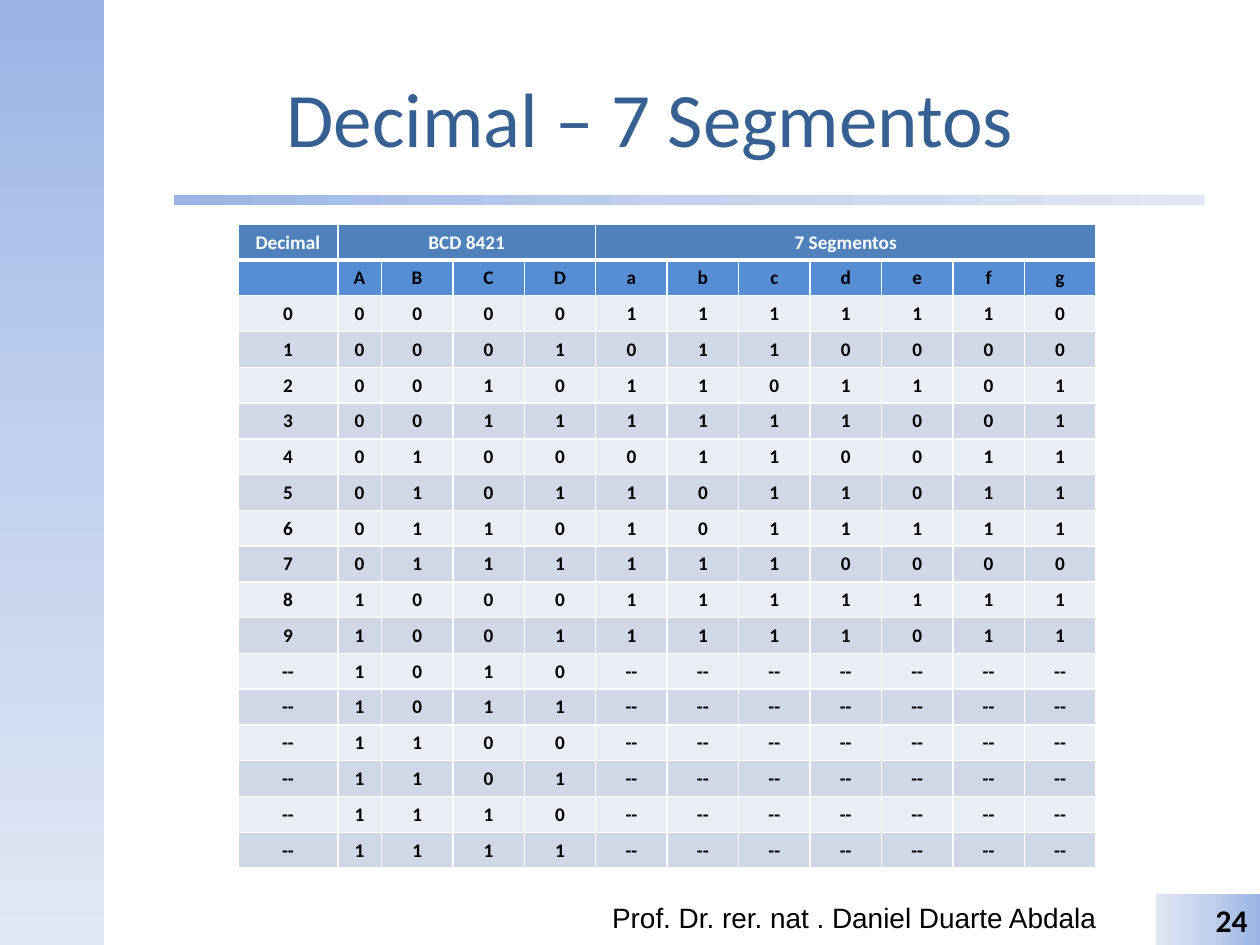
from lxml.etree import SubElement
from pptx import Presentation
from pptx.dml.color import RGBColor
from pptx.enum.shapes import MSO_SHAPE
from pptx.enum.text import MSO_ANCHOR, PP_ALIGN
from pptx.oxml import parse_xml
from pptx.oxml.ns import nsdecls, qn
from pptx.util import Cm, Pt

BLACK = RGBColor(0x00, 0x00, 0x00)
WHITE = RGBColor(0xFF, 0xFF, 0xFF)
TITLE_BLUE = RGBColor(0x37, 0x60, 0x92)
HEADER_BLUE = RGBColor(0x4F, 0x81, 0xBD)
LETTER_BLUE = RGBColor(0x55, 0x8E, 0xD5)
BAND_LIGHT = RGBColor(0xE9, 0xED, 0xF4)
BAND_DARK = RGBColor(0xD0, 0xD8, 0xE8)
GRADIENT = {
    0: RGBColor(0x9A, 0xB5, 0xE4),
    50: RGBColor(0xC2, 0xD1, 0xED),
    100: RGBColor(0xE1, 0xE8, 0xF5),
}

CELL_FONT = {"name": "Calibri", "size": Pt(11), "bold": True}
COLUMN_WIDTHS = [2.01, 0.88] + [1.44] * 10
ROW_HEIGHT = 0.72
ROW_COUNT = 18
HEADERS = [("Decimal", 0, 0), ("BCD 8421", 1, 4), ("7 Segmentos", 5, 11)]
SEGMENTS = [
    "1111110", "0110000", "1101101", "1111001", "0110011",
    "1011011", "1011111", "1110000", "1111111", "1111011",
]


def write_text(text_frame, text, font_values, color, alignment):
    paragraph = text_frame.paragraphs[0]
    paragraph.alignment = alignment
    run = paragraph.add_run()
    run.text = text
    for name, value in font_values.items():
        setattr(run.font, name, value)
    run.font.color.rgb = color


def add_gradient_bar(slide, box, angle, kind=MSO_SHAPE.RECTANGLE):
    shape = slide.shapes.add_shape(kind, *map(Cm, box))
    shape.shadow.inherit = False
    shape.line.fill.background()
    stops = "".join(
        f'<a:gs pos="{position * 1000}"><a:srgbClr val="{color}"/></a:gs>'
        for position, color in GRADIENT.items()
    )
    gradient = parse_xml(
        f'<a:gradFill {nsdecls("a")} rotWithShape="1"><a:gsLst>{stops}</a:gsLst>'
        f'<a:lin ang="{angle * 60000}" scaled="0"/></a:gradFill>'
    )
    shape._element.spPr.find(qn("a:prstGeom")).addnext(gradient)
    return shape


def add_title(slide, box, rule_box):
    title = slide.shapes.title
    title.left, title.top, title.width, title.height = map(Cm, box)
    title.text_frame.vertical_anchor = MSO_ANCHOR.MIDDLE
    write_text(title.text_frame, "Decimal – 7 Segmentos",
               {"name": "Calibri", "size": Pt(44)}, TITLE_BLUE, PP_ALIGN.CENTER)
    rule = add_gradient_bar(slide, rule_box, 0, MSO_SHAPE.ROUNDED_RECTANGLE)
    rule.adjustments[0] = 0


def add_footer(slide, box, number_width):
    left, top, width, height = box
    author = slide.shapes.add_textbox(*map(Cm, box))
    author.text_frame.word_wrap = True
    write_text(author.text_frame, "Prof. Dr. rer. nat . Daniel Duarte Abdala",
               {"name": "Arial", "size": Pt(16)}, BLACK, PP_ALIGN.LEFT)
    number_box = (25.4 - number_width, top, number_width, height)
    number = add_gradient_bar(slide, number_box, 180)
    write_text(number.text_frame, "24",
               {"name": "Calibri", "size": Pt(18), "bold": True},
               BLACK, PP_ALIGN.RIGHT)


def set_borders(cell, top_width, bottom_width):
    properties = cell._tc.get_or_add_tcPr()
    widths = {"lnL": 1, "lnR": 1, "lnT": top_width, "lnB": bottom_width}
    for index, (side, width) in enumerate(widths.items()):
        properties.insert(index, parse_xml(
            f'<a:{side} {nsdecls("a")} w="{Pt(width)}"><a:solidFill>'
            f'<a:srgbClr val="{WHITE}"/></a:solidFill></a:{side}>'
        ))


def format_cell(cell, row):
    bands = [HEADER_BLUE, LETTER_BLUE]
    cell.fill.solid()
    cell.fill.fore_color.rgb = (
        bands[row] if row < 2 else (BAND_LIGHT, BAND_DARK)[row % 2]
    )
    set_borders(cell, 3 if row == 1 else 1, 3 if row == 0 else 1)


def write_cell(cell, text, color):
    if text:
        write_text(cell.text_frame, text, CELL_FONT, color, PP_ALIGN.CENTER)
    else:
        SubElement(cell.text_frame.paragraphs[0]._p, qn("a:endParaRPr"), sz="1100")


def truth_rows():
    yield ["", *"ABCD", *"abcdefg"]
    for value in range(16):
        known = value < len(SEGMENTS)
        decimal = str(value) if known else "--"
        segments = SEGMENTS[value] if known else ["--"] * 7
        yield [decimal, *format(value, "04b"), *segments]


def add_truth_table(slide, left, top):
    frame = slide.shapes.add_table(
        ROW_COUNT, len(COLUMN_WIDTHS), Cm(left), Cm(top),
        Cm(sum(COLUMN_WIDTHS)), Cm(ROW_COUNT * ROW_HEIGHT),
    )
    table = frame.table
    for column, width in zip(table.columns, COLUMN_WIDTHS):
        column.width = Cm(width)
    for row_index, row in enumerate(table.rows):
        row.height = Cm(ROW_HEIGHT)
        for cell in row.cells:
            format_cell(cell, row_index)
    for text, first, last in HEADERS:
        if last > first:
            table.cell(0, first).merge(table.cell(0, last))
        write_cell(table.cell(0, first), text, WHITE)
    for row_index, values in enumerate(truth_rows(), start=1):
        for column_index, text in enumerate(values):
            write_cell(table.cell(row_index, column_index), text, BLACK)


def main():
    presentation = Presentation()
    presentation.slide_width, presentation.slide_height = Cm(25.4), Cm(19.05)
    slide = presentation.slides.add_slide(presentation.slide_layouts[5])
    add_gradient_bar(slide, (0, 0, 2.1, 19.05), 90)
    add_title(slide, (2.1, 0.76, 22.02, 3.18), (3.5, 3.94, 20.8, 0.2))
    add_footer(slide, (12.09, 18.03, 10.64, 1.02), 2.1)
    add_truth_table(slide, 4.8, 4.52)
    presentation.save("out.pptx")


if __name__ == "__main__":
    main()
